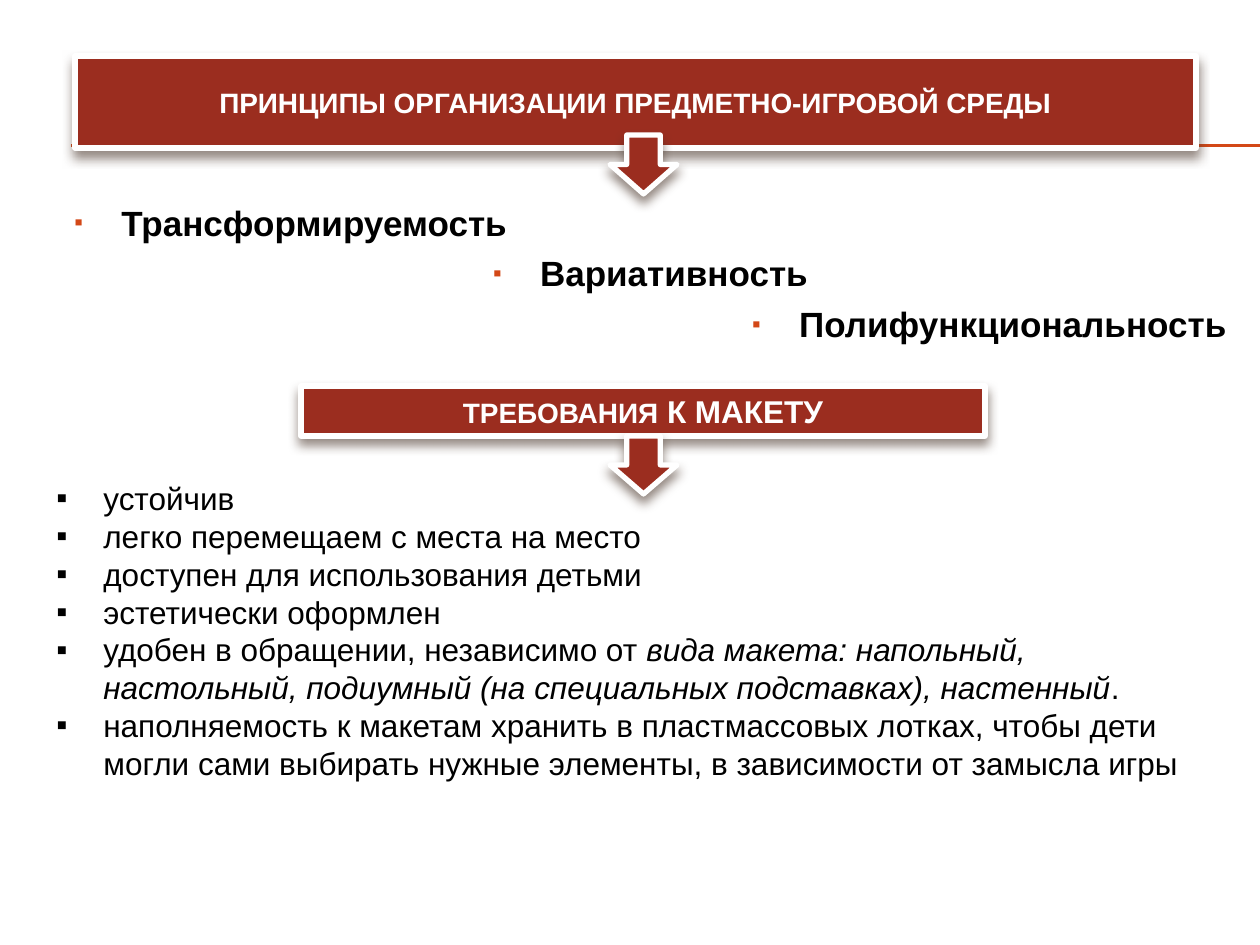
from lxml.etree import SubElement
from pptx import Presentation
from pptx.dml.color import RGBColor
from pptx.enum.shapes import MSO_CONNECTOR, MSO_SHAPE
from pptx.enum.text import MSO_ANCHOR, PP_ALIGN
from pptx.oxml.ns import qn
from pptx.util import Emu, Pt

BRICK = RGBColor(0x9B, 0x2D, 0x1F)
ORANGE = RGBColor(0xD3, 0x48, 0x17)
SHADOW = RGBColor(0x4E, 0x3B, 0x30)
WHITE = RGBColor(0xFF, 0xFF, 0xFF)
BLACK = RGBColor(0x00, 0x00, 0x00)
FONT = "Arial"
INDENT = 47

PRINCIPLES = [
    ("Трансформируемость", PP_ALIGN.LEFT),
    ("Вариативность", PP_ALIGN.CENTER),
    ("Полифункциональность", PP_ALIGN.RIGHT),
]
REQUIREMENTS = [
    ["устойчив"],
    ["легко перемещаем с места на место"],
    ["доступен для использования детьми"],
    ["эстетически оформлен"],
    ["удобен в обращении, независимо от ",
     "вида макета: напольный, настольный, подиумный "
     "(на специальных подставках), настенный", "."],
    ["наполняемость к макетам хранить в пластмассовых лотках, чтобы дети "
     "могли сами выбирать нужные элементы, в зависимости от замысла игры"],
]


def px(length):
    """Turn pixels into EMU."""
    return Emu(round(length * 914400 / 126))


def add_run(paragraph, text, size, color, bold=False, italic=False):
    """Append a formatted run."""
    run = paragraph.add_run()
    run.text = text
    run.font.name = FONT
    run.font.size = Pt(size)
    run.font.bold = bold
    run.font.italic = italic
    run.font.color.rgb = color


def add_bullet(paragraph, color=None, percent=100):
    """Give a paragraph a hanging square bullet."""
    properties = paragraph._p.get_or_add_pPr()
    properties.set("marL", str(px(INDENT)))
    properties.set("indent", str(-px(INDENT)))
    if color is not None:
        bullet_color = SubElement(properties, qn("a:buClr"))
        SubElement(bullet_color, qn("a:srgbClr"), val=str(color))
    SubElement(properties, qn("a:buSzPct"), val=str(percent * 1000))
    SubElement(properties, qn("a:buFont"), typeface=FONT)
    SubElement(properties, qn("a:buChar"), char="▪")


def add_raised_shape(slide, kind, left, top, width, height):
    """Draw a brick shape with a white outline and a soft shadow."""
    shape = slide.shapes.add_shape(kind, px(left), px(top), px(width), px(height))
    shape.shadow.inherit = False
    shape.fill.solid()
    shape.fill.fore_color.rgb = BRICK
    shape.line.color.rgb = WHITE
    shape.line.width = Pt(3)
    effects = shape._element.spPr.find(qn("a:effectLst"))
    shadow = SubElement(effects, qn("a:outerShdw"), blurRad=str(Pt(6)),
                        dist=str(Pt(4)), dir="5400000", rotWithShape="0")
    color = SubElement(shadow, qn("a:srgbClr"), val=str(SHADOW))
    SubElement(color, qn("a:alpha"), val="60000")
    return shape


def add_banner(slide, left, top, width, height, parts):
    """Draw a heading banner from (text, size) parts."""
    banner = add_raised_shape(slide, MSO_SHAPE.RECTANGLE, left, top, width, height)
    frame = banner.text_frame
    frame.word_wrap = True
    frame.vertical_anchor = MSO_ANCHOR.MIDDLE
    paragraph = frame.paragraphs[0]
    paragraph.alignment = PP_ALIGN.CENTER
    for text, size in parts:
        add_run(paragraph, text, size, WHITE, bold=True)


def add_rule(slide, left, top, right):
    """Draw the double orange rule behind the title."""
    for y in (top, top + 1):
        rule = slide.shapes.add_connector(
            MSO_CONNECTOR.STRAIGHT, px(left), px(y), px(right), px(y))
        rule.line.color.rgb = ORANGE
        rule.line.width = Pt(0.75)
        SubElement(rule._element.spPr, qn("a:effectLst"))


def add_paragraphs(slide, left, top, width, height, count):
    """Add a wrapping text box and return its paragraphs."""
    box = slide.shapes.add_textbox(px(left), px(top), px(width), px(height))
    frame = box.text_frame
    frame.word_wrap = True
    for _ in range(count - 1):
        frame.add_paragraph()
    return frame.paragraphs


def add_principles(slide, left, top, width, height):
    """List the principles stepping from left to right."""
    paragraphs = add_paragraphs(slide, left, top, width, height, len(PRINCIPLES))
    for paragraph, (text, alignment) in zip(paragraphs, PRINCIPLES):
        paragraph.alignment = alignment
        paragraph.space_before = Pt(5)
        add_bullet(paragraph, ORANGE, 70)
        add_run(paragraph, text, 20, BLACK, bold=True)


def add_requirements(slide, left, top, width, height):
    """List the requirements, with every second run in italics."""
    paragraphs = add_paragraphs(slide, left, top, width, height, len(REQUIREMENTS))
    for paragraph, parts in zip(paragraphs, REQUIREMENTS):
        add_bullet(paragraph)
        for index, text in enumerate(parts):
            add_run(paragraph, text, 18, BLACK, italic=index % 2 == 1)


def main():
    """Build and save the slide."""
    presentation = Presentation()
    presentation.slide_width = px(1260)
    presentation.slide_height = px(945)
    slide = presentation.slides.add_slide(presentation.slide_layouts[6])
    add_rule(slide, 71, 145, 1260)
    add_banner(slide, 75, 56, 1121, 92,
               [("ПРИНЦИПЫ ОРГАНИЗАЦИИ ПРЕДМЕТНО-ИГРОВОЙ СРЕДЫ", 16)])
    add_principles(slide, 62, 195, 1177, 277)
    add_raised_shape(slide, MSO_SHAPE.DOWN_ARROW, 610, 135, 67, 59)
    add_banner(slide, 301, 386, 684, 50, [("ТРЕБОВАНИЯ", 16), (" К МАКЕТУ", 18)])
    add_raised_shape(slide, MSO_SHAPE.DOWN_ARROW, 610, 436, 67, 58)
    add_requirements(slide, 44, 473, 1164, 318)
    presentation.save("out.pptx")


if __name__ == "__main__":
    main()
